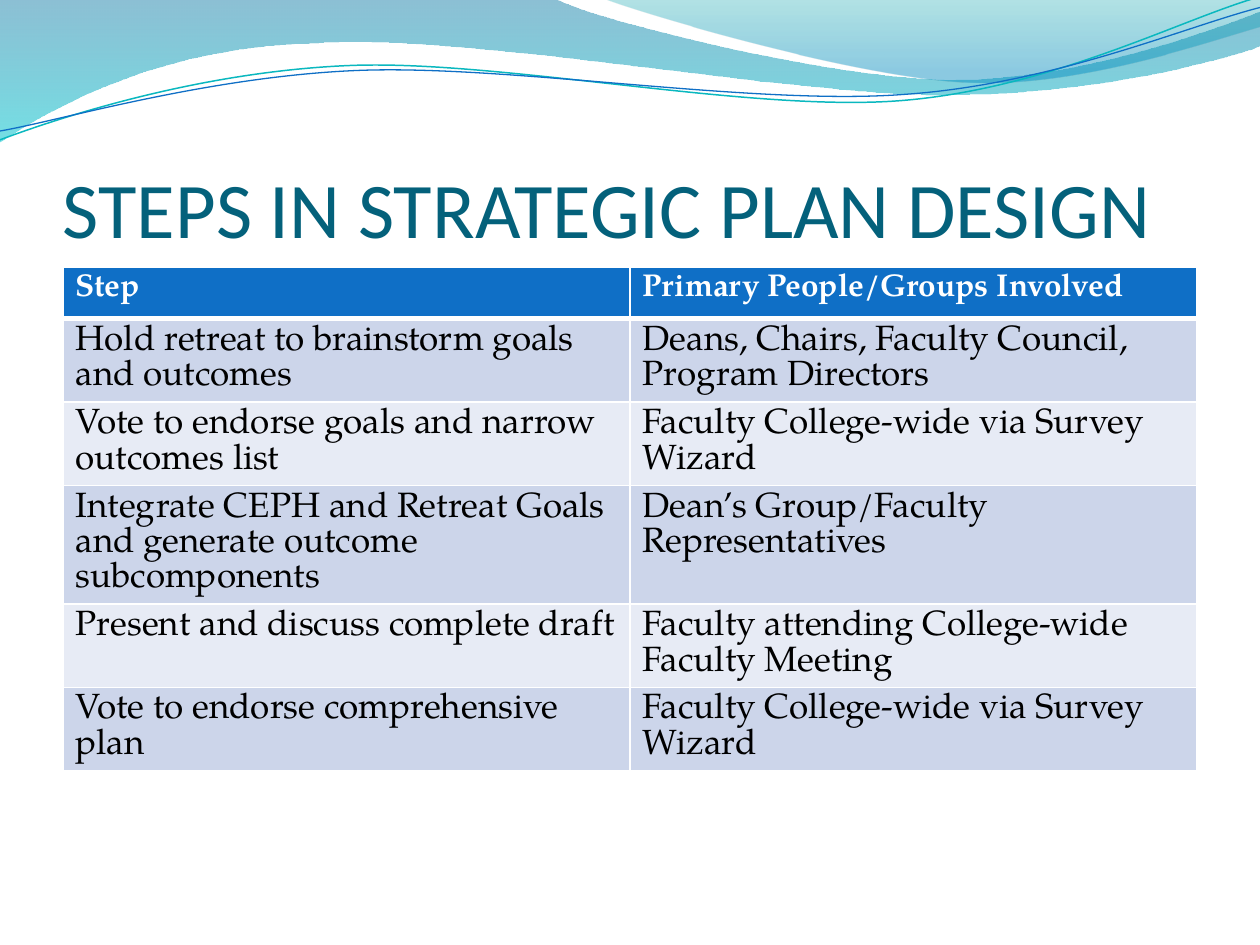
from math import cos, radians, sin

from lxml import etree
from pptx import Presentation
from pptx.dml.color import RGBColor
from pptx.enum.text import MSO_ANCHOR
from pptx.oxml.ns import qn
from pptx.util import Inches, Pt

BOTTOM = MSO_ANCHOR.BOTTOM
COLOURS = {
    "title": "04617B", "header": "0F6FC6", "odd": "CCD5EA", "even": "E7EBF5",
    "white": "FFFFFF", "black": "000000", "deep": "0074A1", "aqua": "00C6CF",
    "teal": "00A1A9", "sky": "008BBF", "teal_line": "0AB8BF", "blue_line": "0F6FC6",
}
TITLE_FONT, BODY_FONT = "Calibri", "TeX Gyre Pagella"
WAVE_TILT = -2.7
ROW_HEIGHT = 0.41
BODY_LINE = 20.18
ROWS = [
    ("Step", "Primary People/Groups Involved"),
    ("Hold retreat to brainstorm goals and outcomes",
     "Deans, Chairs, Faculty Council, Program Directors"),
    ("Vote to endorse goals and narrow outcomes list",
     "Faculty College-wide via Survey Wizard"),
    ("Integrate CEPH and Retreat Goals and generate outcome subcomponents",
     "Dean’s Group/Faculty Representatives"),
    ("Present and discuss complete draft",
     "Faculty attending College-wide Faculty Meeting"),
    ("Vote to endorse comprehensive plan",
     "Faculty College-wide via Survey Wizard"),
]
# Each outline is a start point, then steps: two numbers for a line, six for a curve.
WIDE_BAND = [
    (0, 0), (4.4, -0.01), (4.76, 0.17, 6.64, 0.63, 7.58, 0.63),
    (8.53, 0.63, 9.58, 0.26, 10, 0.09), (10.01, 0.36),
    (9.83, 0.44, 8.7, 0.76, 7.46, 0.75), (6.22, 0.75, 3.82, 0.28, 2.57, 0.34),
    (1.29, 0.36, 0.46, 0.83, -0.01, 1.13), (0, 0),
]
RIGHT_BAND = [
    (4.79, -0.01), (5.09, 0.11, 6.82, 0.62, 7.69, 0.65),
    (8.56, 0.69, 9.61, 0.32, 10, 0.21), (10, 0), (4.79, -0.01),
]
TEAL_WAVE = [
    (0, 1.11), (0.48, 0.93, 1.58, 0.57, 2.77, 0.52),
    (3.95, 0.47, 5.93, 0.89, 7.13, 0.8), (8.33, 0.71, 9.38, 0.15, 9.98, -0.02),
]
BLUE_WAVE = [
    (0, 1.04), (0.47, 0.96, 1.64, 0.61, 2.83, 0.56),
    (4.03, 0.51, 5.97, 0.84, 7.17, 0.75), (8.36, 0.67, 9.41, 0.21, 10, 0.06),
]


def colour(name):
    return RGBColor.from_string(COLOURS[name])


def write(frame, text, *, size, font, ink, bold=False, line=None):
    para = frame.paragraphs[0]
    if line:
        para.line_spacing = Pt(line)
    span = para.add_run()
    span.text = text
    span.font.size = Pt(size)
    span.font.name = font
    span.font.bold = bold
    span.font.color.rgb = colour(ink)


def turn(point, centre, degrees):
    angle = radians(degrees)
    dx, dy = point[0] - centre[0], point[1] - centre[1]
    return (centre[0] + dx * cos(angle) - dy * sin(angle),
            centre[1] + dx * sin(angle) + dy * cos(angle))


def bend(shape, outline):
    """Merge each three line steps that stand for a curve into one Bézier step."""
    track = next(shape.element.iter(qn("a:path")))
    lines = iter(track.findall(qn("a:lnTo")))
    for step in outline[1:]:
        first, *others = [next(lines) for _ in range(len(step) // 2)]
        for other in others:
            first.append(other[0])
            track.remove(other)
        if others:
            first.tag = qn("a:cubicBezTo")


def add_outline(page, outline, left, top, closed, tilt=0):
    points = [(left + step[i], top + step[i + 1])
              for step in outline for i in range(0, len(step), 2)]
    if tilt:
        centre = [(points[0][axis] + points[-1][axis]) / 2 for axis in (0, 1)]
        centre[1] += 0.03
        points = [turn(point, centre, -tilt) for point in points]
    points = [(Inches(x), Inches(y)) for x, y in points]
    builder = page.shapes.build_freeform(*points[0], scale=1.0)
    builder.add_line_segments(points[1:], close=closed)
    shape = builder.convert_to_shape()
    bend(shape, outline)
    shape.rotation = tilt
    shape.shadow.inherit = False
    return shape


def add_band(page, outline, left, top, stops):
    """Draw a closed band; stops hold position, colour name and opacity percent."""
    band = add_outline(page, outline, left, top, True)
    band.line.fill.background()
    band.fill.gradient()
    band.fill.gradient_angle = 270
    for stop, (position, name, _) in zip(band.fill.gradient_stops, stops):
        stop.position = position
        stop.color.rgb = colour(name)
    for node, (_, _, opacity) in zip(band.element.iter(qn("a:srgbClr")), stops):
        etree.SubElement(node, qn("a:alpha"), val=str(opacity * 1000))


def add_wave(page, outline, left, top, name, width):
    wave = add_outline(page, outline, left, top, False, WAVE_TILT)
    wave.fill.background()
    wave.line.color.rgb = colour(name)
    wave.line.width = Pt(width)


def add_header_art(page, left, top):
    add_band(page, WIDE_BAND, left, top, [(0, "deep", 45), (1, "aqua", 55)])
    add_band(page, RIGHT_BAND, left, top, [(0, "teal", 30), (0.8, "sky", 45)])
    add_wave(page, TEAL_WAVE, left, top, "teal_line", 0.85)
    add_wave(page, BLUE_WAVE, left, top, "blue_line", 0.75)


def add_title(page, left, top, width, height):
    box = page.shapes.add_textbox(Inches(left), Inches(top), Inches(width), Inches(height))
    frame = box.text_frame
    frame.word_wrap = True
    frame.vertical_anchor = BOTTOM
    frame.margin_left = frame.margin_right = frame.margin_bottom = 0
    frame.margin_top = Inches(0.05)
    write(frame, "STEPS IN STRATEGIC PLAN DESIGN", size=45, font=TITLE_FONT, ink="title")


def add_borders(cell, bottom, top):
    properties = cell._tc.get_or_add_tcPr()
    for side, width in (("L", 1), ("R", 1), ("T", top), ("B", bottom)):
        line = etree.SubElement(properties, qn(f"a:ln{side}"), w=str(Pt(width)))
        fill = etree.SubElement(line, qn("a:solidFill"))
        etree.SubElement(fill, qn("a:srgbClr"), val=COLOURS["white"])


def add_steps_table(page, left, top, width):
    table = page.shapes.add_table(len(ROWS), 2, Inches(left), Inches(top), Inches(width),
                                  Inches(ROW_HEIGHT * len(ROWS))).table
    table.horz_banding = False
    for row, texts in enumerate(ROWS):
        is_header = row == 0
        shade = "header" if is_header else ("even", "odd")[row % 2]
        for column, text in enumerate(texts):
            cell = table.cell(row, column)
            add_borders(cell, bottom=3 if is_header else 1, top=3 if row == 1 else 1)
            cell.fill.solid()
            cell.fill.fore_color.rgb = colour(shade)
            write(cell.text_frame, text, size=18 if is_header else 20, font=BODY_FONT,
                  ink="white" if is_header else "black", bold=is_header,
                  line=None if is_header else BODY_LINE)


def main():
    deck = Presentation()
    deck.slide_width, deck.slide_height = Inches(10), Inches(7.5)
    page = deck.slides.add_slide(deck.slide_layouts[6])
    add_header_art(page, 0, 0)
    add_title(page, 0.5, 0.77, 9, 1.25)
    add_steps_table(page, 0.5, 2.12, 9)
    deck.save("out.pptx")


if __name__ == "__main__":
    main()
